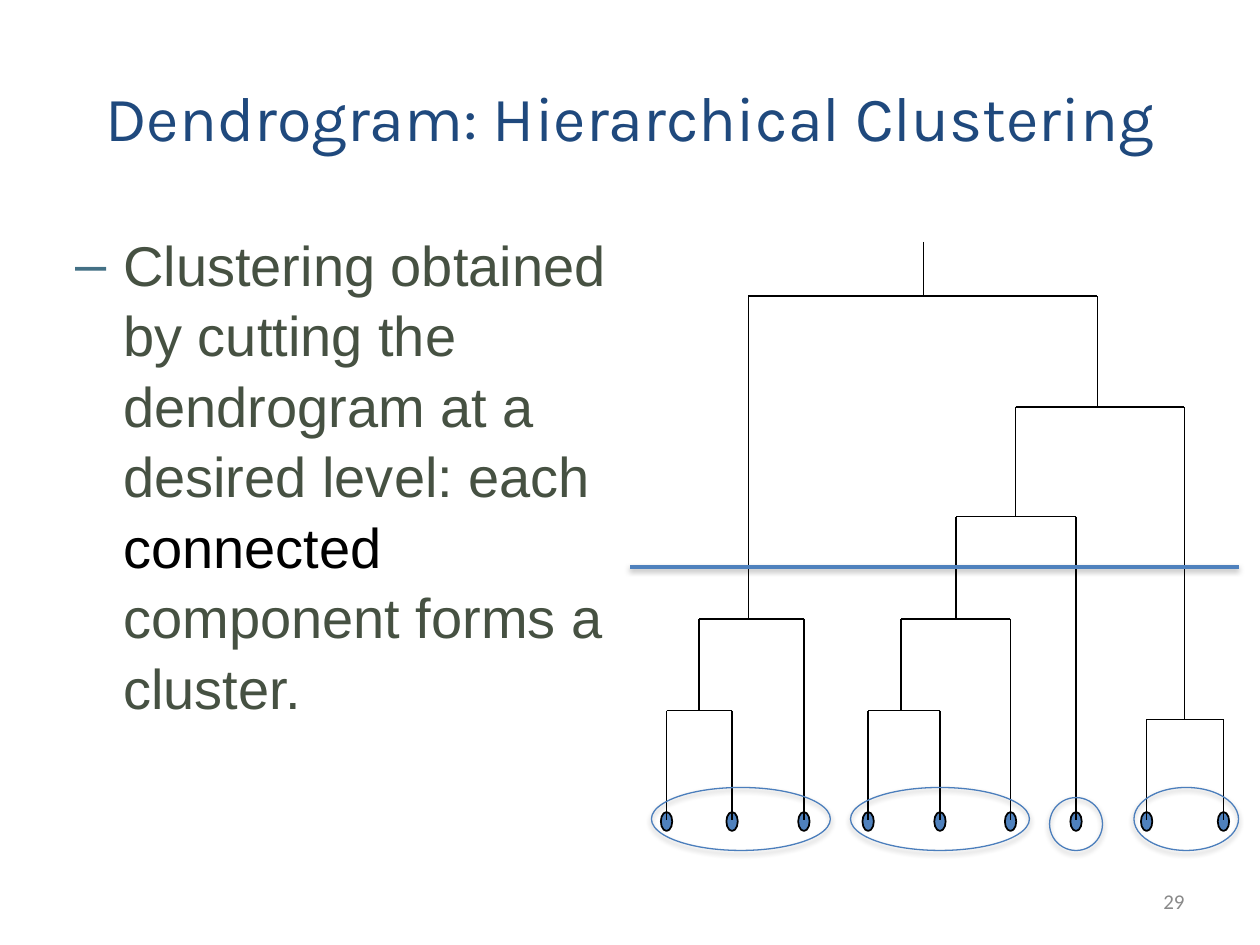
from dataclasses import dataclass

from lxml import etree
from pptx import Presentation
from pptx.dml.color import RGBColor
from pptx.enum import shapes as es, text as et
from pptx.oxml import ns
from pptx.util import Inches, Pt


@dataclass(frozen=True)
class Theme:
    title: str = "1F497D"
    body: str = "465142"
    strong: str = "000000"
    dash: str = "437085"
    page: str = "898989"
    tree: str = "000000"
    leaf: str = "4F81BD"
    ring: str = "4B7EBC"
    title_size: int = 36
    body_size: int = 32
    page_size: int = 12


T = Theme()

# A node is (x, y of its bar, left child, right child); a leaf is its x.
# Lengths are inches from the top left of the tree box.
TREE = (2.33, 0.43,
        (0.94, 2.99, (0.55, 3.72, 0.29, 0.81), 1.38),
        (3.71, 1.31,
         (3.06, 2.18,
          (2.59, 2.99, (2.15, 3.72, 1.89, 2.46), 3.02),
          3.54),
         (4.4, 3.79, 4.1, 4.71)))
LEAF_Y = 4.59
LEAF_W, LEAF_H = 0.09, 0.15
RINGS = [(0.17, 4.33, 1.42, 0.5), (1.75, 4.33, 1.42, 0.5),
         (3.33, 4.41, 0.42, 0.42), (4, 4.33, 0.83, 0.5)]
CUT_Y = 2.58


def rgb(code):
    return RGBColor.from_string(code)


def sub(node, tag, **attrs):
    return etree.SubElement(node, ns.qn(tag), attrs)


def effect(item, alpha=0, dist=0):
    """Give an item a soft shadow below it, or none when alpha is 0."""
    fx = sub(item._element.spPr, "a:effectLst")
    if alpha:
        cast = sub(fx, "a:outerShdw", blurRad=str(Pt(3.1)),
                   dist=str(Pt(dist)), dir="5400000", rotWithShape="0")
        color = sub(cast, "a:srgbClr", val="000000")
        sub(color, "a:alpha", val=str(alpha * 1000))


def add_line(to, x1, y1, x2, y2, color, width):
    line = to.add_connector(es.MSO_CONNECTOR.STRAIGHT, Inches(x1), Inches(y1),
                            Inches(x2), Inches(y2))
    line.line.color.rgb = rgb(color)
    line.line.width = Pt(width)
    return line


def add_oval(to, x, y, w, h, color, width, fill=None):
    oval = to.add_shape(es.MSO_SHAPE.OVAL, Inches(x), Inches(y),
                        Inches(w), Inches(h))
    if fill:
        oval.fill.solid()
        oval.fill.fore_color.rgb = rgb(fill)
    else:
        oval.fill.background()
    oval.line.color.rgb = rgb(color)
    oval.line.width = Pt(width)
    return oval


def add_text(slide, box, runs, font, size, align, anchor):
    """Place one paragraph of (words, color) runs."""
    frame = slide.shapes.add_textbox(*map(Inches, box)).text_frame
    frame.word_wrap = True
    frame.vertical_anchor = anchor
    para = frame.paragraphs[0]
    para.alignment = align
    for words, color in runs:
        run = para.add_run()
        run.text = words
        run.font.name = font
        run.font.size = Pt(size)
        run.font.color.rgb = rgb(color)
    return para


def add_title(slide, box):
    add_text(slide, box, [("Dendrogram: Hierarchical Clustering", T.title)],
             "Karla", T.title_size, et.PP_ALIGN.CENTER, et.MSO_ANCHOR.MIDDLE)


def add_body(slide, box):
    runs = [("Clustering obtained by cutting the dendrogram at a desired "
             "level: each ", T.body),
            ("connected", T.strong),
            (" component forms a cluster.", T.body)]
    para = add_text(slide, box, runs, "Arial", T.body_size,
                    et.PP_ALIGN.LEFT, et.MSO_ANCHOR.TOP)
    para.line_spacing = 1.05
    para.space_before = Pt(6.4)
    # Dash bullet with a hanging indent
    props = para._p.get_or_add_pPr()
    props.set("marL", str(Inches(0.38)))
    props.set("indent", str(Inches(-0.38)))
    sub(sub(props, "a:buClr"), "a:srgbClr", val=T.dash)
    sub(props, "a:buFont", typeface="Arial")
    sub(props, "a:buChar", char="–")


def add_page(slide, box):
    add_text(slide, box, [("29", T.page)], "Calibri", T.page_size,
             et.PP_ALIGN.RIGHT, et.MSO_ANCHOR.MIDDLE)


def add_node(to, node, left, top, start):
    """Draw the stem from start down to a node, then all below it."""
    def draw(x1, y1, x2, y2):
        effect(add_line(to, left + x1, top + y1, left + x2, top + y2,
                        T.tree, 1))

    if not isinstance(node, tuple):
        oval = add_oval(to, left + node - LEAF_W / 2, top + LEAF_Y - LEAF_H / 2 + 0.01,
                        LEAF_W, LEAF_H, T.tree, 1, T.leaf)
        oval.shadow.inherit = False
        draw(node, start, node, LEAF_Y)
        return
    x, bar, *kids = node
    draw(x, start, x, bar)
    ends = [kid[0] if isinstance(kid, tuple) else kid for kid in kids]
    draw(ends[0], bar, ends[1], bar)
    for kid in kids:
        add_node(to, kid, left, top, bar)


def add_tree(slide, box):
    left, top, width, _ = box
    group = slide.shapes.add_group_shape()
    add_node(group.shapes, TREE, left, top, 0)
    # Rings round the clusters
    for x, y, w, h in RINGS:
        ring = add_oval(slide.shapes, left + x, top + y, w, h, T.ring, 0.75)
        effect(ring, 35, 1.8)
    # Level of the cut
    cut = add_line(slide.shapes, left, top + CUT_Y, left + width, top + CUT_Y,
                   T.leaf, 2)
    effect(cut, 38, 1.6)


def main():
    deck = Presentation()
    deck.slide_width, deck.slide_height = Inches(10), Inches(7.5)
    slide = deck.slides.add_slide(deck.slide_layouts[6])
    add_title(slide, (0.5, 0.3, 9, 1.25))
    add_body(slide, (0.5, 1.75, 4.42, 4.95))
    add_page(slide, (7.17, 6.95, 2.33, 0.4))
    add_tree(slide, (5, 1.92, 4.83, 4.83))
    deck.save("out.pptx")


if __name__ == "__main__":
    main()
